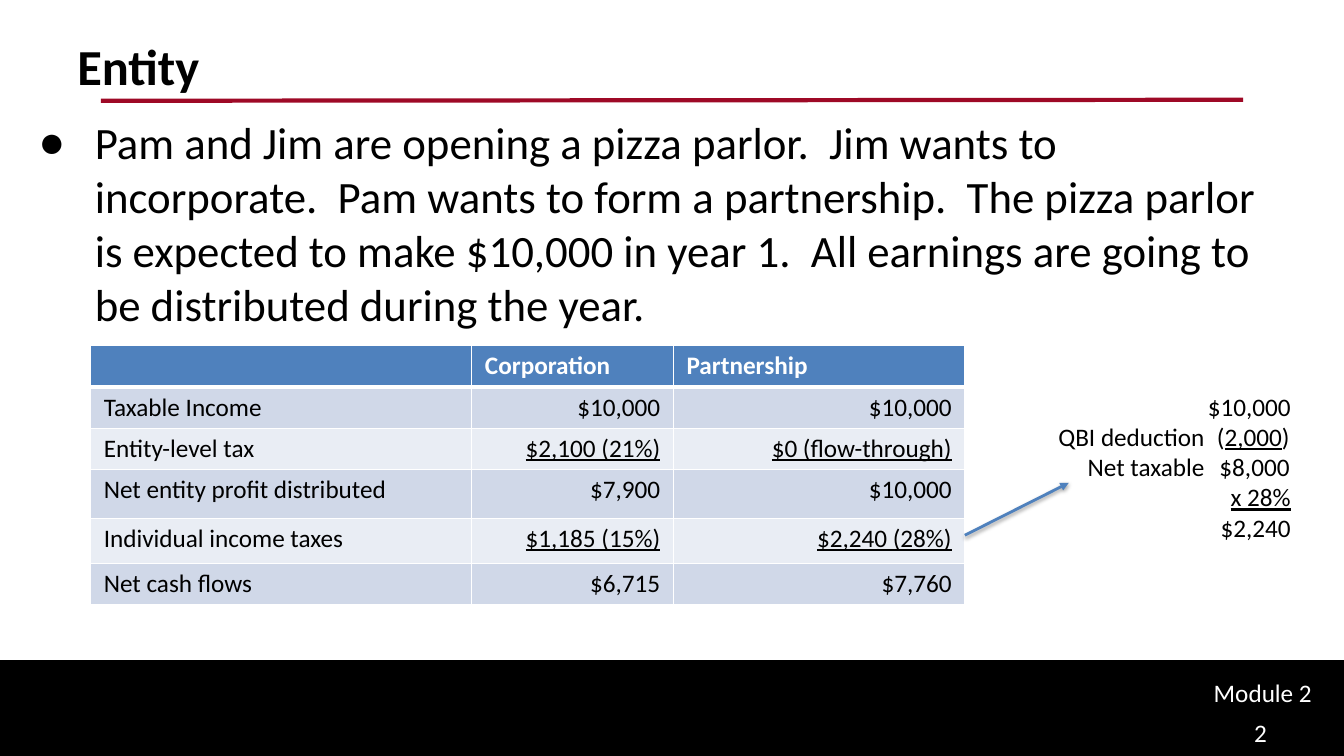
from dataclasses import dataclass

from lxml.etree import SubElement
from pptx import Presentation
from pptx.dml.color import RGBColor
from pptx.enum.shapes import MSO_CONNECTOR as Connector, MSO_SHAPE as Shape
from pptx.enum.text import MSO_ANCHOR as Anchor, MSO_AUTO_SIZE as AutoSize, PP_ALIGN as Align
from pptx.oxml.ns import qn
from pptx.util import Inches, Length, Pt

WIDTH, HEIGHT = Inches(13.33), Inches(7.5)
BLACK, WHITE, RED, BLUE = "000000", "FFFFFF", "9E0926", "4F81BD"
BANDS = ("E9EDF4", "D0D8E8")


@dataclass(frozen=True)
class Area:
    left: float
    top: float
    width: float
    height: float

    def lengths(self) -> tuple[Length, ...]:
        return across(self.left), down(self.top), across(self.width), down(self.height)


@dataclass(frozen=True)
class Label:
    text: str
    area: Area


@dataclass(frozen=True)
class Span:
    text: str
    underline: bool = False


@dataclass(frozen=True)
class NoteLine:
    spans: tuple[Span, ...]
    tabbed: bool = False


@dataclass(frozen=True)
class TaxRow:
    texts: tuple[str, str, str]
    height: float = 5.47
    underline: bool = False


TITLE = Label("Entity", Area(5, 4, 90, 16.67))
BODY = Label(
    "Pam and Jim are opening a pizza parlor.  Jim wants to incorporate.  "
    "Pam wants to form a partnership.  The pizza parlor is expected to make "
    "$10,000 in year 1.  All earnings are going to be distributed during the year.",
    Area(2.1, 14.53, 92.35, 61.07),
)
FOOTERS = (
    Label("Module 2", Area(89.57, 88.93, 9.9, 5.33)),
    Label("2", Area(92.57, 94.27, 6.83, 5.73)),
)
FOOTER_BAND = Area(0, 87.47, 100, 12.53)
TABLE_AREA = Area(6.75, 45.73, 65.04, 34.28)
COLUMNS = (28.36, 15, 21.68)
ROWS = (
    TaxRow(("", "Corporation", "Partnership")),
    TaxRow(("Taxable Income", "$10,000", "$10,000")),
    TaxRow(("Entity-level tax", "$2,100 (21%)", "$0 (flow-through)"), underline=True),
    TaxRow(("Net entity profit distributed", "$7,900", "$10,000"), 6.4),
    TaxRow(("Individual income taxes", "$1,185 (15%)", "$2,240 (28%)"), 6, True),
    TaxRow(("Net cash flows", "$6,715", "$7,760")),
)
NOTE_AREA = Area(77.87, 51.07, 18.9, 21.6)
NOTE_STOPS = (11.02, 17.35)
NOTE = (
    NoteLine((Span("$10,000"),)),
    NoteLine((Span("\tQBI deduction\t("), Span("2,000", True), Span(")")), True),
    NoteLine((Span("\tNet taxable\t$8,000"),), True),
    NoteLine((Span("x 28%", True),)),
    NoteLine((Span("$2,240"),)),
)


def across(share: float) -> Length:
    return Length(round(WIDTH * share / 100))


def down(share: float) -> Length:
    return Length(round(HEIGHT * share / 100))


def color(value: str) -> RGBColor:
    return RGBColor.from_string(value)


def style(font, size: float, value: str, bold: bool = False, underline: bool = False) -> None:
    font.name, font.size = "Calibri", Pt(size)
    font.bold, font.underline = bold, underline
    font.color.rgb = color(value)


def place(box, area: Area) -> None:
    box.left, box.top, box.width, box.height = area.lengths()


def fill_placeholder(box, label: Label, size: float, bold: bool = False):
    place(box, label.area)
    frame = box.text_frame
    frame.text = label.text
    frame.word_wrap, frame.auto_size = True, AutoSize.NONE
    frame.vertical_anchor = Anchor.TOP
    para = frame.paragraphs[0]
    para.alignment, para.space_before = Align.LEFT, Pt(0)
    for span in para.runs:
        style(span.font, size, BLACK, bold)
    return para


def add_bullet(para, symbol: str, indent: Length) -> None:
    properties = para._p.get_or_add_pPr()
    properties.set("marL", str(indent))
    properties.set("indent", str(-indent))
    SubElement(properties, qn("a:buChar"), char=symbol)


def add_line(page, start: tuple, end: tuple, value: str, weight: float):
    line = page.shapes.add_connector(
        Connector.STRAIGHT, across(start[0]), down(start[1]), across(end[0]), down(end[1])
    )
    line.line.color.rgb, line.line.width = color(value), Pt(weight)
    return line, SubElement(line._element.spPr, qn("a:effectLst"))


def add_arrow(page, start: tuple, end: tuple) -> None:
    line, effects = add_line(page, start, end, BLUE, 2)
    SubElement(line.line._get_or_add_ln(), qn("a:tailEnd"), type="triangle")
    shadow = SubElement(
        effects, qn("a:outerShdw"), blurRad=str(Pt(3.1)), dist=str(Pt(1.6)),
        dir="5400000", rotWithShape="0",
    )
    tint = SubElement(shadow, qn("a:srgbClr"), val=BLACK)
    SubElement(tint, qn("a:alpha"), val="38000")


def add_footer(page) -> None:
    band = page.shapes.add_shape(Shape.RECTANGLE, *FOOTER_BAND.lengths())
    band.shadow.inherit = False
    band.fill.solid()
    band.fill.fore_color.rgb = color(BLACK)
    band.line.color.rgb, band.line.width = color(BLACK), Pt(2)
    for label in FOOTERS:
        frame = page.shapes.add_textbox(*label.area.lengths()).text_frame
        frame.text, frame.word_wrap = label.text, True
        style(frame.paragraphs[0].runs[0].font, 18, WHITE)


def add_borders(cell, row: int) -> None:
    weights = {"L": 1, "R": 1, "T": 3 if row == 1 else 1, "B": 3 if row == 0 else 1}
    properties = cell._tc.get_or_add_tcPr()
    for side, weight in weights.items():
        border = SubElement(properties, qn(f"a:ln{side}"), w=str(Pt(weight)))
        SubElement(SubElement(border, qn("a:solidFill")), qn("a:srgbClr"), val=WHITE)


def add_tax_table(page) -> None:
    table = page.shapes.add_table(len(ROWS), len(COLUMNS), *TABLE_AREA.lengths()).table
    for column, share in zip(table.columns, COLUMNS):
        column.width = across(share)
    for row, entry in enumerate(ROWS):
        table.rows[row].height = down(entry.height)
        for column, text in enumerate(entry.texts):
            cell, header, amount = table.cell(row, column), row == 0, column > 0
            add_borders(cell, row)
            cell.fill.solid()
            cell.fill.fore_color.rgb = color(BLUE if header else BANDS[row % 2])
            cell.margin_left = cell.margin_right = Inches(0.13)
            cell.margin_top = cell.margin_bottom = Inches(0.05)
            cell.text_frame.text = text
            para = cell.text_frame.paragraphs[0]
            para.alignment = Align.RIGHT if amount and not header else Align.LEFT
            style(para.font, 18, WHITE if header else BLACK, header)
            for span in para.runs:
                style(span.font, 18, WHITE if header else BLACK, header, amount and entry.underline)


def add_note(page) -> None:
    frame = page.shapes.add_textbox(*NOTE_AREA.lengths()).text_frame
    frame.word_wrap = True
    for index, line in enumerate(NOTE):
        para = frame.add_paragraph() if index else frame.paragraphs[0]
        para.alignment = Align.LEFT if line.tabbed else Align.RIGHT
        if line.tabbed:
            stops = SubElement(para._p.get_or_add_pPr(), qn("a:tabLst"))
            for share in NOTE_STOPS:
                SubElement(stops, qn("a:tab"), pos=str(across(share)), algn="r")
        for part in line.spans:
            span = para.add_run()
            span.text = part.text
            style(span.font, 18, BLACK, underline=part.underline)


def main() -> None:
    deck = Presentation()
    deck.slide_width, deck.slide_height = WIDTH, HEIGHT
    page = deck.slides.add_slide(deck.slide_layouts[1])
    fill_placeholder(page.shapes.title, TITLE, 36, True)
    add_bullet(fill_placeholder(page.placeholders[1], BODY, 32), "●", Inches(0.56))
    add_line(page, (7.5, 13.33), (92.5, 13.2), RED, 3)
    add_footer(page)
    add_tax_table(page)
    add_note(page)
    add_arrow(page, (71.79, 70.8), (79.52, 63.87))
    deck.save("out.pptx")


if __name__ == "__main__":
    main()
